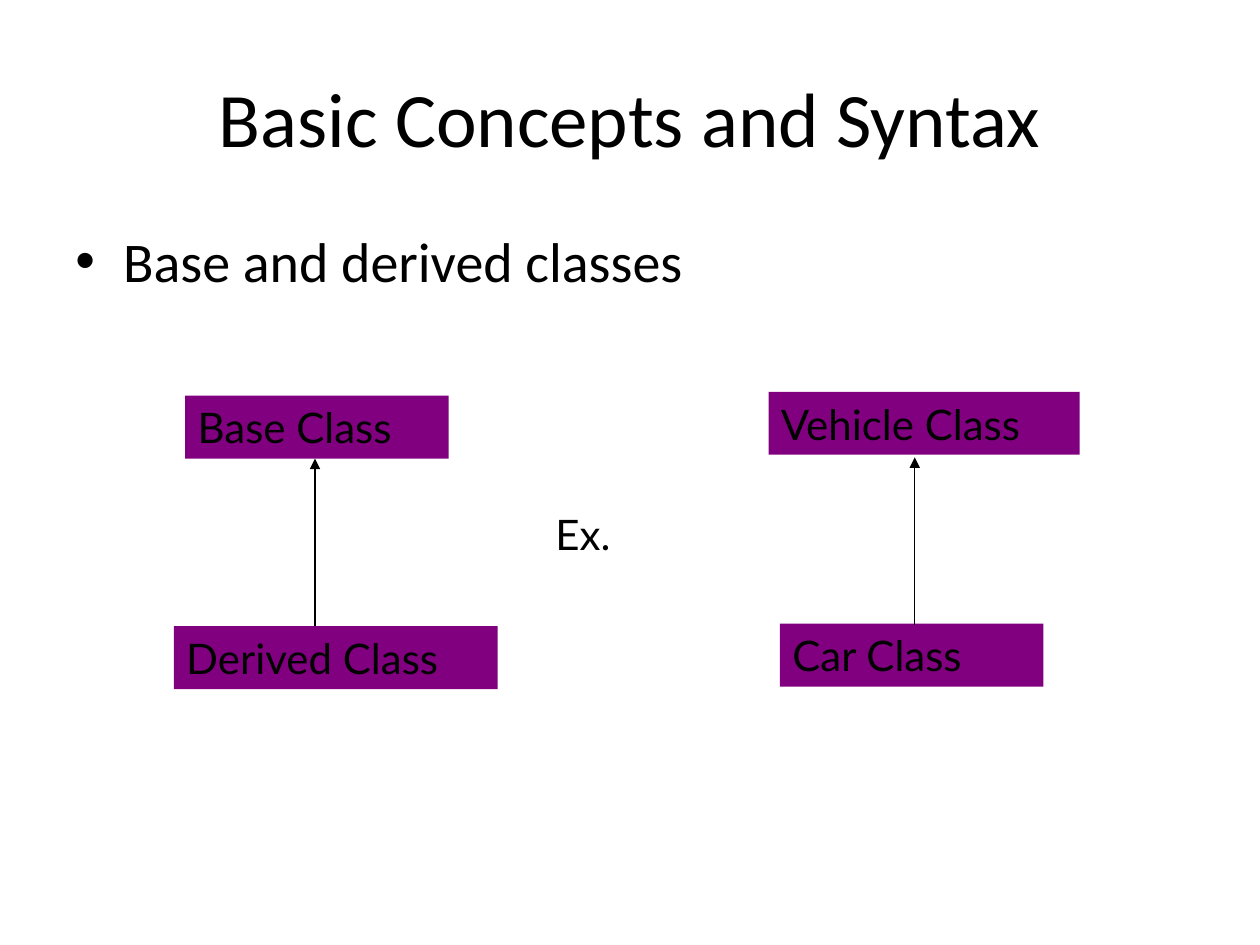
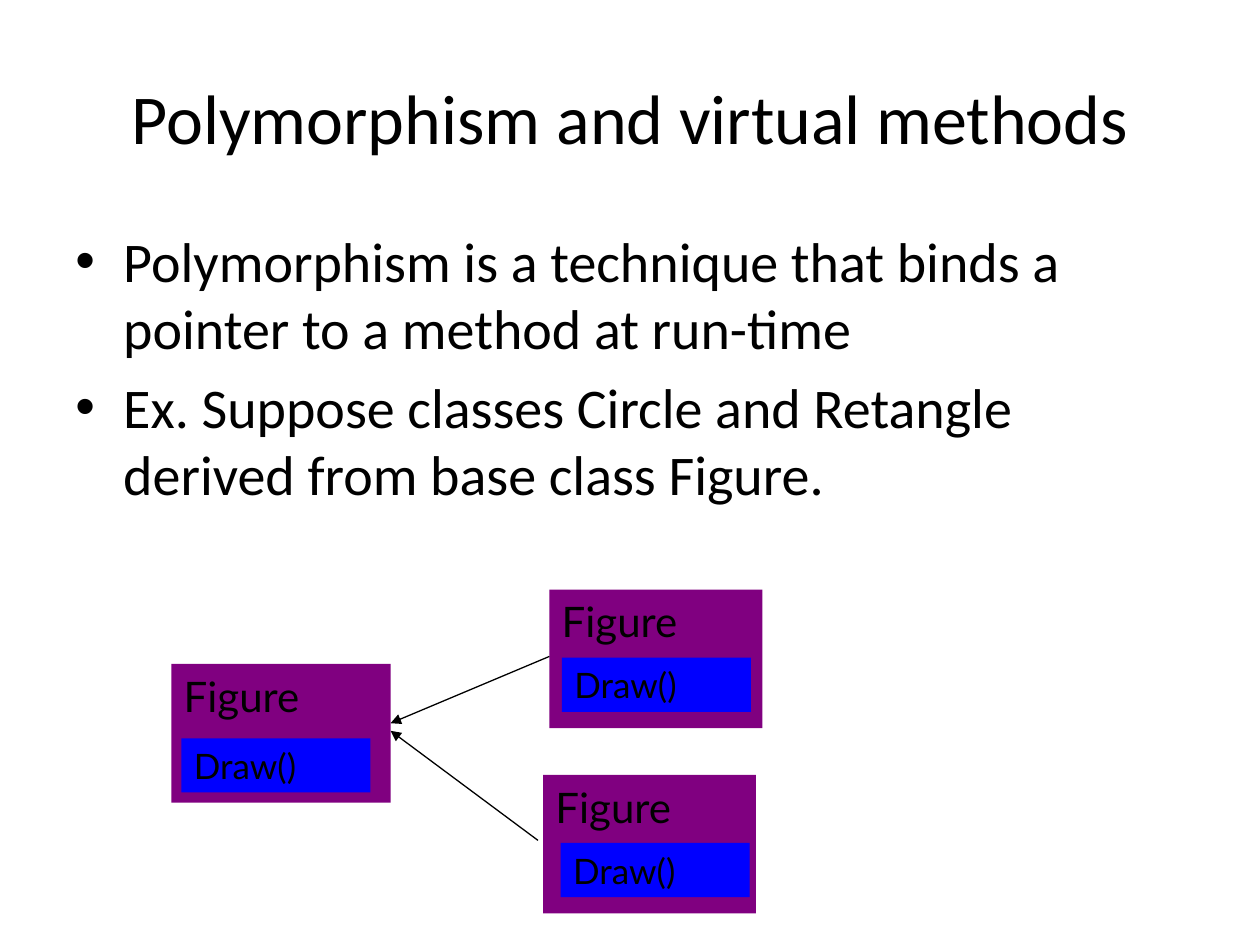
from typing import NamedTuple

from lxml import etree
from pptx import Presentation
from pptx.dml.color import RGBColor
from pptx.enum.shapes import MSO_CONNECTOR, MSO_SHAPE
from pptx.enum.text import MSO_ANCHOR, PP_ALIGN
from pptx.oxml.ns import qn
from pptx.util import Inches, Pt

RECT = MSO_SHAPE.RECTANGLE
LINE = MSO_CONNECTOR.STRAIGHT
TOP, MIDDLE = MSO_ANCHOR.TOP, MSO_ANCHOR.MIDDLE
LEFT, CENTER = PP_ALIGN.LEFT, PP_ALIGN.CENTER

COLORS = {"page": "FFFFFF", "ink": "000000", "class": "800080", "method": "0000FF"}
HEAD, LABEL = "Calibri", "Lato"
INDENT = 0.38


class Box(NamedTuple):
    text: str
    left: float
    top: float
    width: float
    height: float = 0.5
    fill: str | None = "class"
    size: float = 24


class Arrow(NamedTuple):
    start: tuple[float, float]
    end: tuple[float, float]


class Page(NamedTuple):
    title: str
    size: float
    points: list[str]
    boxes: list[Box]
    arrows: list[Arrow]


def color(key: str) -> RGBColor:
    return RGBColor.from_string(COLORS[key])


def style(para, font: str, size: float, align=LEFT) -> None:
    para.alignment = align
    for run in para.runs:
        run.font.name = font
        run.font.size = Pt(size)
        run.font.color.rgb = color("ink")


def add_text(slide, left: float, top: float, width: float, height: float):
    """Add a wrapping text box and return its frame."""
    shape = slide.shapes.add_textbox(*map(Inches, (left, top, width, height)))
    shape.text_frame.word_wrap = True
    return shape.text_frame


def add_title(slide, text: str, size: float) -> None:
    frame = add_text(slide, 0.5, 0.3, 9, 1.25)
    frame.vertical_anchor = MIDDLE
    frame.text = text
    style(frame.paragraphs[0], HEAD, size, CENTER)


def add_points(slide, points: list[str]) -> None:
    frame = add_text(slide, 0.5, 1.75, 9, 4.95)
    frame.text = "\n".join(points)
    for pos, para in enumerate(frame.paragraphs):
        style(para, HEAD, 32)
        if pos:
            para.space_before = Pt(6.4)
        # Hanging bullet
        props = para._p.get_or_add_pPr()
        props.set("marL", str(Inches(INDENT)))
        props.set("indent", str(-Inches(INDENT)))
        etree.SubElement(props, qn("a:buFont")).set("typeface", "Arial")
        etree.SubElement(props, qn("a:buChar")).set("char", "•")


def add_box(slide, box: Box) -> None:
    place = (box.left, box.top, box.width, box.height)
    if box.fill:
        shape = slide.shapes.add_shape(RECT, *map(Inches, place))
        shape.shadow.inherit = False
        shape.fill.solid()
        shape.fill.fore_color.rgb = color(box.fill)
        shape.line.fill.background()
        frame = shape.text_frame
        frame.word_wrap = True
    else:
        frame = add_text(slide, *place)
    frame.vertical_anchor = TOP
    frame.text = box.text
    style(frame.paragraphs[0], LABEL, box.size)


def add_arrow(slide, arrow: Arrow) -> None:
    ends = map(Inches, arrow.start + arrow.end)
    link = slide.shapes.add_connector(LINE, *ends)
    link.line.color.rgb = color("ink")
    link.line.width = Pt(0.75)
    tip = etree.SubElement(link.line._get_or_add_ln(), qn("a:tailEnd"))
    tip.set("type", "triangle")
    etree.SubElement(link._element.spPr, qn("a:effectLst"))


def figure(left: float, top: float, width: float) -> Box:
    return Box("Figure", left, top, width, 1.1)


def draw(left: float, top: float) -> Box:
    return Box("Draw()", left, top, 1.5, 0.43, "method", 20)


PAGES = [
    Page(
        "Basic Concepts and Syntax", 44,
        ["Base and derived classes"],
        [
            Box("Base Class", 1.47, 3.14, 2.09),
            Box("Derived Class", 1.38, 4.97, 2.57),
            Box("Car Class", 6.19, 4.95, 2.09),
            Box("Vehicle Class", 6.1, 3.11, 2.47),
            Box("Ex.", 4.31, 3.99, 2.09, fill=None),
        ],
        [Arrow((2.5, 4.97), (2.5, 3.64)), Arrow((7.26, 4.96), (7.26, 3.63))],
    ),
    Page(
        "Polymorphism and virtual methods", 40,
        [
            "Polymorphism is a technique that binds a pointer to a method at run-time",
            "Ex. Suppose classes Circle and Retangle derived from base class Figure.",
        ],
        [
            figure(1.36, 5.27, 1.74), draw(1.44, 5.86),
            figure(4.31, 6.15, 1.69), draw(4.45, 6.69),
            figure(4.36, 4.68, 1.69), draw(4.46, 5.22),
        ],
        [Arrow((4.36, 5.21), (3.1, 5.74)), Arrow((4.27, 6.67), (3.1, 5.8))],
    ),
]


def main() -> None:
    deck = Presentation()
    deck.slide_width, deck.slide_height = Inches(10), Inches(7.5)
    blank = deck.slide_layouts[6]
    for page in PAGES:
        slide = deck.slides.add_slide(blank)
        slide.background.fill.solid()
        slide.background.fill.fore_color.rgb = color("page")
        add_title(slide, page.title, page.size)
        add_points(slide, page.points)
        for box in page.boxes:
            add_box(slide, box)
        for arrow in page.arrows:
            add_arrow(slide, arrow)
    deck.save("out.pptx")


if __name__ == "__main__":
    main()
